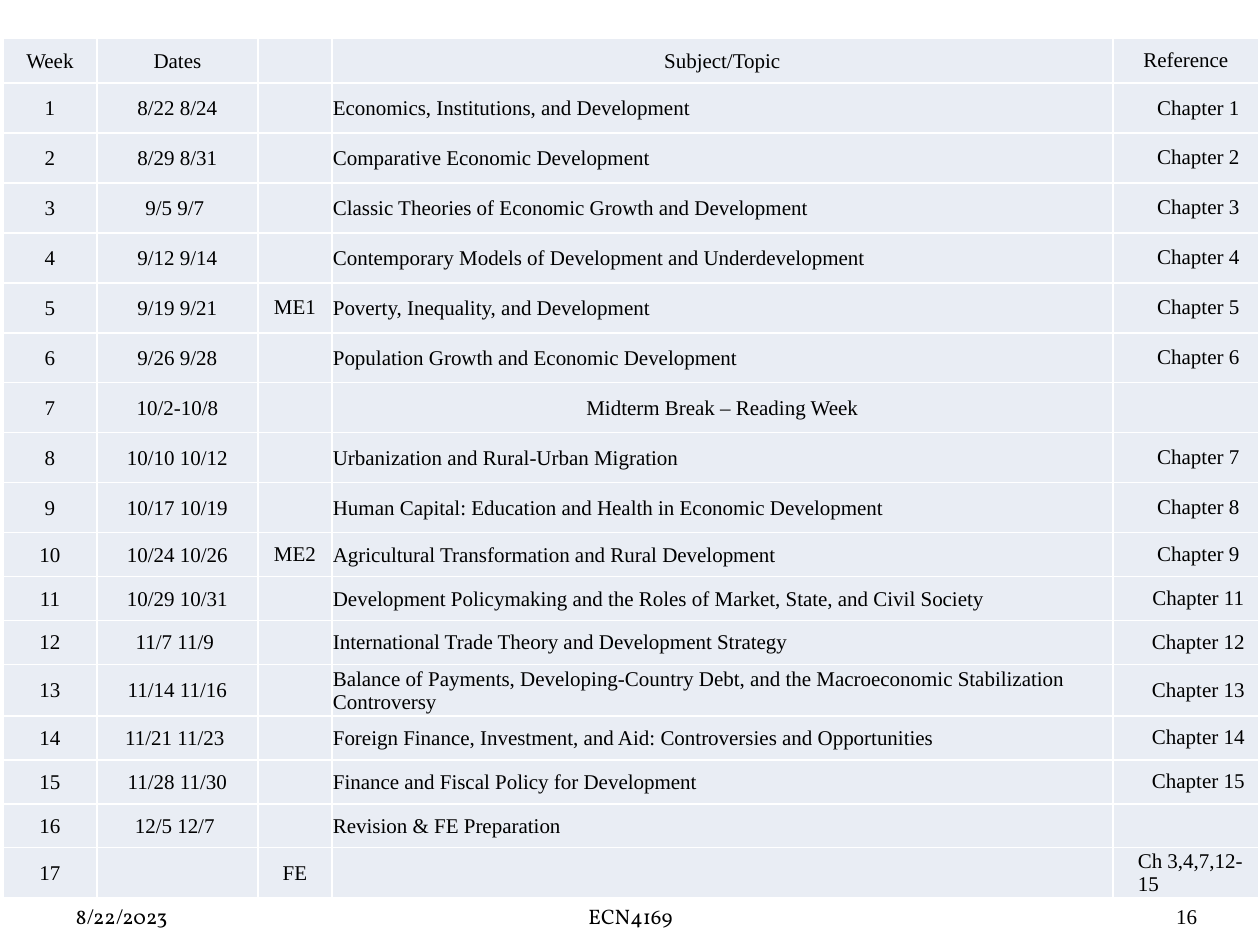
from dataclasses import dataclass

from lxml import etree
from pptx import Presentation
from pptx import util as u
from pptx.dml.color import RGBColor
from pptx.enum import text
from pptx.oxml.ns import qn

PX = 914400 // 126  # EMU per px


@dataclass(frozen=True)
class Theme:
    ink: str = "000000"
    cell: str = "E9EDF4"
    border: str = "FFFFFF"
    body_font: str = "Times New Roman"
    footer_font: str = "Vollkorn"
    size: int = 12
    border_pt: int = 1


LEFT, CENTER, RIGHT = text.PP_ALIGN.LEFT, text.PP_ALIGN.CENTER, text.PP_ALIGN.RIGHT
REFERENCE_INDENT = 25
COLUMNS = [94, 161, 74, 781, 146]
ROWS = [45] + [50] * 9 + [44] * 8
HEADER = ["Week", "Dates", "", "Subject/Topic", "Reference"]

# Dates, exam, topic, reference; the week number is the row number
SCHEDULE = [
    ("8/22 8/24", "", "Economics, Institutions, and Development", "Chapter 1"),
    ("8/29 8/31", "", "Comparative Economic Development", "Chapter 2"),
    ("9/5 9/7 ", "", "Classic Theories of Economic Growth and Development", "Chapter 3"),
    ("9/12 9/14", "", "Contemporary Models of Development and Underdevelopment", "Chapter 4"),
    ("9/19 9/21", "ME1", "Poverty, Inequality, and Development", "Chapter 5"),
    ("9/26 9/28", "", "Population Growth and Economic Development", "Chapter 6"),
    ("10/2-10/8", "", "Midterm Break – Reading Week", ""),
    ("10/10 10/12", "", "Urbanization and Rural-Urban Migration", "Chapter 7"),
    ("10/17 10/19", "", "Human Capital: Education and Health in Economic Development", "Chapter 8"),
    ("10/24 10/26", "ME2", "Agricultural Transformation and Rural Development", "Chapter 9"),
    ("10/29 10/31", "", "Development Policymaking and the Roles of Market, State, and Civil Society",
     "Chapter 11"),
    ("11/7 11/9 ", "", "International Trade Theory and Development Strategy", "Chapter 12"),
    ("11/14 11/16", "", "Balance of Payments, Developing-Country Debt, and the Macroeconomic "
     "Stabilization Controversy", "Chapter 13"),
    ("11/21 11/23 ", "", "Foreign Finance, Investment, and Aid: Controversies and Opportunities",
     "Chapter 14"),
    ("11/28 11/30", "", "Finance and Fiscal Policy for Development", "Chapter 15"),
    ("12/5 12/7 ", "", "Revision & FE Preparation", ""),
    ("", "FE", "", "Ch 3,4,7,12-15"),
]


class SlideBuilder:
    def __init__(self, slide, theme):
        self.s = slide
        self.theme = theme

    def set_text(self, tf, words, align, font):
        tf.text = words
        p = tf.paragraphs[0]
        p.alignment = align
        for r in p.runs:
            r.font.name = font
            r.font.size = u.Pt(self.theme.size)
            r.font.color.rgb = RGBColor.from_string(self.theme.ink)
        return p

    def footer(self, words, x, width, align, inset=13):
        sp = self.s.shapes.add_textbox(x * PX, 885 * PX, width * PX, 50 * PX)
        tf = sp.text_frame
        tf.word_wrap = True
        tf.vertical_anchor = text.MSO_ANCHOR.BOTTOM
        tf.margin_left = tf.margin_right = inset * PX
        font = self.theme.footer_font if inset else self.theme.body_font
        self.set_text(tf, words, align, font)

    def table(self, x, y, columns, rows):
        frame = self.s.shapes.add_table(len(rows), len(columns), x * PX, y * PX,
                                        sum(columns) * PX, sum(rows) * PX)
        table = frame.table
        table.first_row = table.horz_banding = False
        for column, width in zip(table.columns, columns):
            column.width = width * PX
        for row, height in zip(table.rows, rows):
            row.height = height * PX
        return table

    def cell(self, cell, words, align, inset=1, indent=0):
        cell.vertical_anchor = text.MSO_ANCHOR.MIDDLE
        cell.margin_left = cell.margin_right = cell.margin_top = inset * PX
        cell.margin_bottom = 0
        self.borders(cell)
        cell.fill.solid()
        cell.fill.fore_color.rgb = RGBColor.from_string(self.theme.cell)
        p = self.set_text(cell.text_frame, words, align, self.theme.body_font)
        if indent:
            p._p.get_or_add_pPr().set("marL", str(indent * PX))

    def borders(self, cell):
        tc_pr = cell._tc.get_or_add_tcPr()
        for side in "LRTB":
            ln = etree.SubElement(tc_pr, qn(f"a:ln{side}"), w=str(u.Pt(self.theme.border_pt)))
            fill = etree.SubElement(ln, qn("a:solidFill"))
            etree.SubElement(fill, qn("a:srgbClr"), val=self.theme.border)


def main():
    prs = Presentation()
    prs.slide_width, prs.slide_height = u.Inches(10), u.Inches(7.5)
    b = SlideBuilder(prs.slides.add_slide(prs.slide_layouts[6]), Theme())

    # Footer: date, course, page number
    b.footer("8/22/2023", 63, 294, LEFT)
    b.footer("ECN4169", 431, 399, CENTER)
    b.footer("16", 1092, 105, RIGHT, inset=0)

    # Course schedule
    table = b.table(3, 38, COLUMNS, ROWS)
    lines = [HEADER] + [(str(week), *line) for week, line in enumerate(SCHEDULE, 1)]
    for i, line in enumerate(lines):
        is_header, is_last, is_break = i == 0, i == len(SCHEDULE), "Break" in line[3]
        topic_align = CENTER if is_header or is_break else LEFT
        reference_align = LEFT if is_last else CENTER
        week, dates, exam, topic, reference = (table.cell(i, j) for j in range(len(COLUMNS)))
        b.cell(week, line[0], CENTER)
        b.cell(dates, line[1], CENTER)
        b.cell(exam, line[2], CENTER, inset=0)
        b.cell(topic, line[3], topic_align)
        b.cell(reference, line[4], reference_align, inset=0,
               indent=0 if is_header else REFERENCE_INDENT)

    prs.save("out.pptx")


if __name__ == "__main__":
    main()
